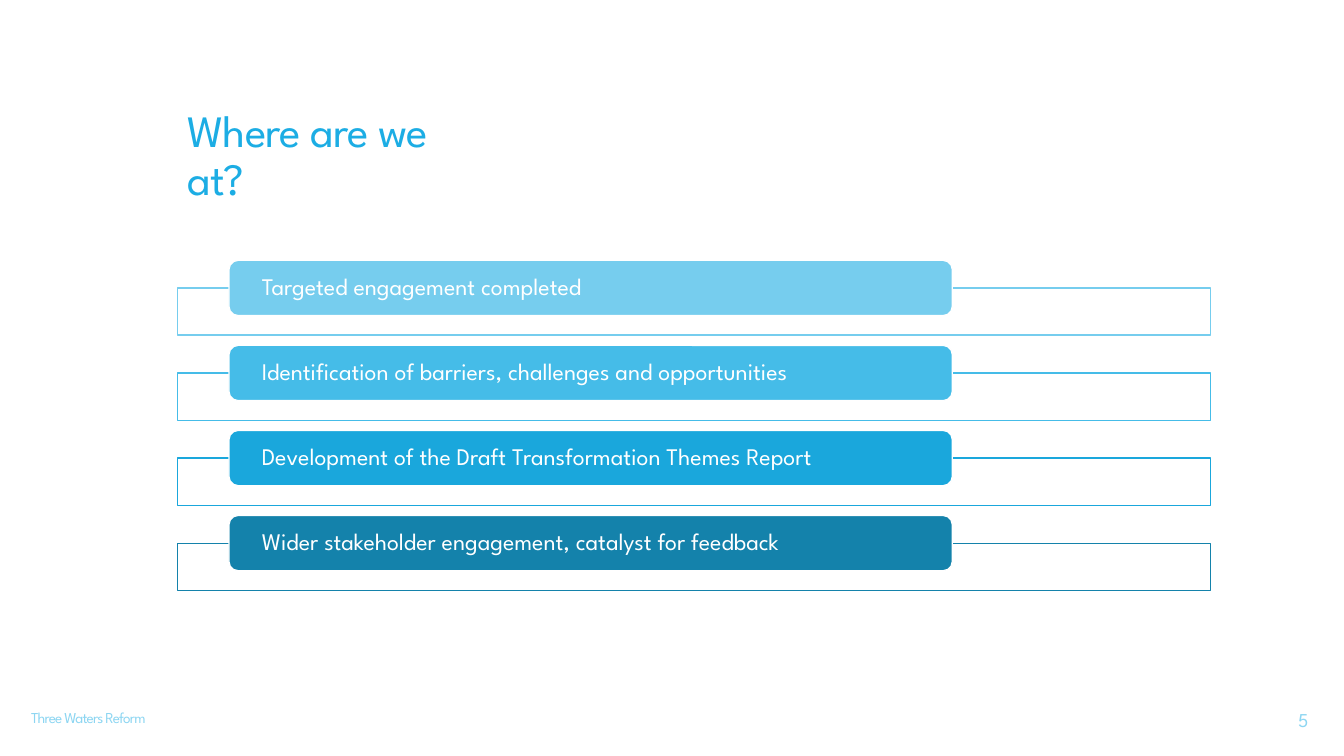
from dataclasses import dataclass

from lxml.etree import SubElement
from pptx import Presentation
from pptx.dml.color import RGBColor
from pptx.enum.shapes import MSO_SHAPE as Shape
from pptx.enum.text import MSO_ANCHOR as Anchor, PP_ALIGN as Align
from pptx.oxml.ns import qn
from pptx.util import Pt


@dataclass(frozen=True)
class Theme:
    font: str = "League Spartan"
    white: str = "FFFFFF"
    title: str = "1CADE4"
    footer: str = "8DD6F2"
    steps: tuple = ("76CDEE", "45BCE8", "1AA7DC", "1482AB")
    title_size: float = 32
    step_size: float = 17
    footer_size: float = 10.8
    number_size: float = 14
    line_width: float = 0.85
    tracking: float = -0.6


THEME = Theme()

STEPS = (
    "Targeted engagement completed",
    "Identification of barriers, challenges and opportunities",
    "Development of the Draft Transformation Themes Report",
    "Wider stakeholder engagement, catalyst for feedback",
)


def rgb(code):
    return RGBColor.from_string(code)


def write(sp, text, size, color, spacing=0.9, tracking=0):
    tf = sp.text_frame
    tf.word_wrap = True
    tf.vertical_anchor = Anchor.MIDDLE
    p = tf.paragraphs[0]
    p.alignment = Align.LEFT
    p.line_spacing = spacing
    r = p.add_run()
    r.text = text
    r.font.name = THEME.font
    r.font.size = Pt(size)
    r.font.color.rgb = rgb(color)
    if tracking:
        r.font._element.set("spc", str(round(tracking * 100)))


def add_label(slide, box, text, size, color, spacing=0.9):
    sp = slide.shapes.add_textbox(*map(Pt, box))
    write(sp, text, size, color, spacing, THEME.tracking)


def add_panel(slide, kind, box, fill, line):
    sp = slide.shapes.add_shape(kind, *map(Pt, box))
    sp.shadow.inherit = False
    sp.fill.solid()
    sp.fill.fore_color.rgb = rgb(fill)
    sp.line.color.rgb = rgb(line)
    sp.line.width = Pt(THEME.line_width)
    return sp


def set_opacity(sp, percent):
    color = sp._element.spPr.find(qn("a:solidFill"))[0]
    SubElement(color, qn("a:alpha")).set("val", str(percent * 1000))


def add_step(slide, box, text, color):
    """Draw an outlined frame with a filled label straddling its top edge."""
    left, top, width, height = box
    label_height = 39.4
    frame_top = top + label_height / 2
    frame = add_panel(slide, Shape.RECTANGLE,
                      (left, frame_top, width, top + height - frame_top),
                      THEME.white, color)
    set_opacity(frame, 90)

    label = add_panel(slide, Shape.ROUNDED_RECTANGLE,
                      (left + width * 0.05, top, width * 0.7, label_height),
                      color, THEME.white)
    tf = label.text_frame
    tf.margin_left = tf.margin_right = Pt(21.5)
    tf.margin_top = tf.margin_bottom = 0
    write(label, text, THEME.step_size, THEME.white)


def add_steps(slide, box):
    left, top, width, height = box
    gap = 7.4
    step_height = (height - gap * (len(STEPS) - 1)) / len(STEPS)
    for i, (text, color) in enumerate(zip(STEPS, THEME.steps)):
        step_top = top + i * (step_height + gap)
        add_step(slide, (left, step_top, width, step_height), text, color)


def add_footer(slide, box):
    left, top, width, height = box
    number_width = 24.5
    add_label(slide, (left, top, 118.8, height), "Three Waters Reform",
              THEME.footer_size, THEME.footer, 0.87)
    add_label(slide, (left + width - number_width, top, number_width, height),
              "5", THEME.number_size, THEME.footer, 1.07)


def main():
    prs = Presentation()
    prs.slide_width, prs.slide_height = Pt(960), Pt(540)
    slide = prs.slides.add_slide(prs.slide_layouts[6])
    add_steps(slide, (126.7, 186, 738, 235.6))
    add_label(slide, (126.7, 61.2, 231.8, 101.5), "Where are we at?",
              THEME.title_size, THEME.title)
    add_footer(slide, (15.1, 501.8, 929.6, 23.8))
    prs.save("out.pptx")


if __name__ == "__main__":
    main()
